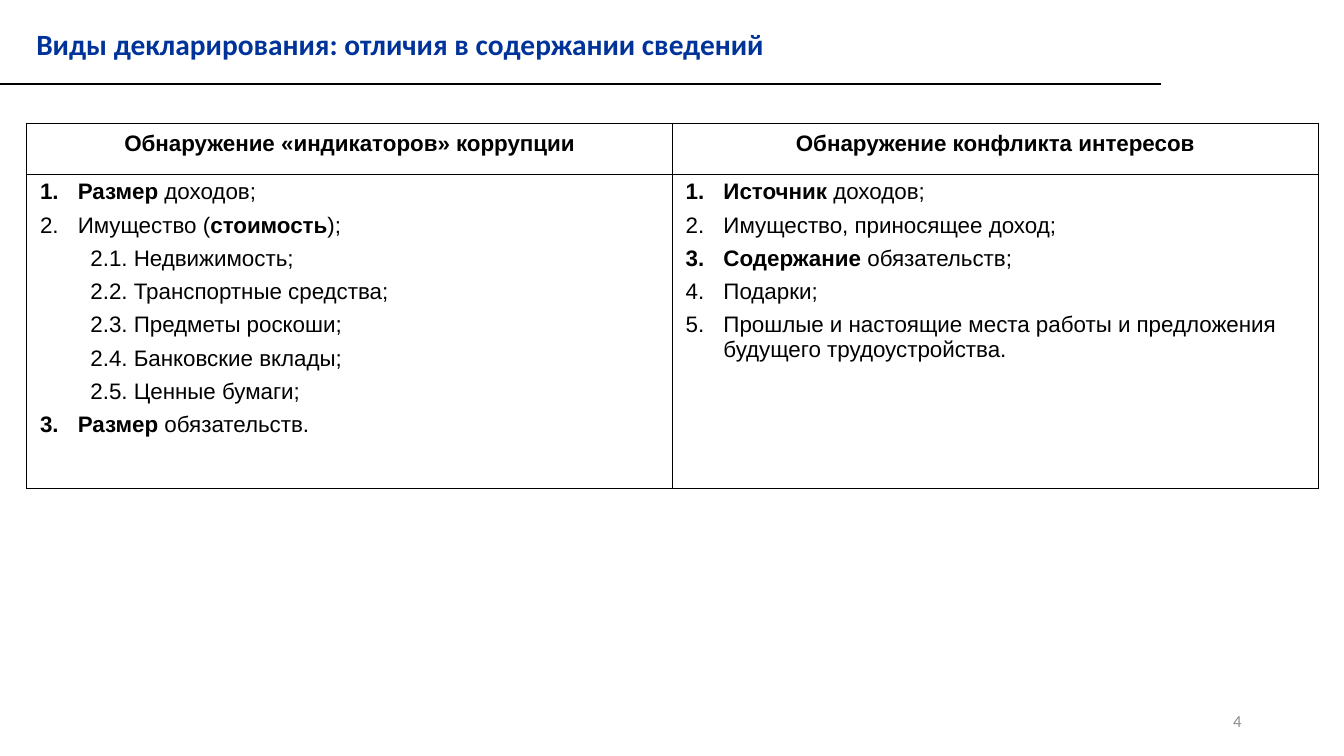
import pptx
import pptx.dml.color
import pptx.enum.shapes
import pptx.enum.text
import pptx.oxml
import pptx.oxml.ns
import pptx.util

Pt = pptx.util.Pt
PP_ALIGN = pptx.enum.text.PP_ALIGN
ANCHOR = pptx.enum.text.MSO_ANCHOR


def rgb(value):
    return pptx.dml.color.RGBColor.from_string(value)


def add_text(p, text, font="Arial", size=16, color="000000", bold=False):
    r = p.add_run()
    r.text = text
    r.font.name = font
    r.font.size = Pt(size)
    r.font.bold = bold
    r.font.color.rgb = rgb(color)


def add_xml(parent, xml):
    ns = pptx.oxml.ns.nsdecls("a")
    parent.append(pptx.oxml.parse_xml(xml.replace("/>", f" {ns}/>", 1)
                                      if xml.endswith("/>") and xml.count("<") == 1
                                      else xml.replace(">", f" {ns}>", 1)))


class Deck:
    """Holds the style and the current slide, and adds elements to it."""

    ink = "000000"
    accent = "003399"
    muted = "8C8C8C"
    heading_font = "Calibri"

    def __init__(self, prs):
        self.s = prs.slides.add_slide(prs.slide_layouts[5])

    def title(self, text, x, y, w, h):
        sp = self.s.shapes.title
        sp.left, sp.top, sp.width, sp.height = Pt(x), Pt(y), Pt(w), Pt(h)
        tf = sp.text_frame
        tf.word_wrap = False
        tf.auto_size = pptx.enum.text.MSO_AUTO_SIZE.NONE
        tf.vertical_anchor = ANCHOR.MIDDLE
        p = tf.paragraphs[0]
        p.alignment = PP_ALIGN.LEFT
        add_text(p, text, self.heading_font, 21, self.accent, True)

    def page_number(self, text, x, y, w, h):
        tf = self.s.shapes.add_textbox(Pt(x), Pt(y), Pt(w), Pt(h)).text_frame
        tf.word_wrap = True
        tf.vertical_anchor = ANCHOR.MIDDLE
        p = tf.paragraphs[0]
        p.alignment = PP_ALIGN.RIGHT
        add_text(p, text, self.heading_font, 12, self.muted)

    def rule(self, x1, x2, y):
        kind = pptx.enum.shapes.MSO_CONNECTOR.STRAIGHT
        sp = self.s.shapes.add_connector(kind, Pt(x1), Pt(y), Pt(x2), Pt(y))
        sp.line.color.rgb = rgb(self.ink)
        sp.line.width = Pt(1.5)
        add_xml(sp._element.spPr, "<a:effectLst/>")

    def table(self, columns, x, y, w, heights):
        table = self.s.shapes.add_table(2, len(columns), Pt(x), Pt(y), Pt(w),
                                        Pt(sum(heights))).table
        for row, height in zip(table.rows, heights):
            row.height = Pt(height)
        for i, (heading, items) in enumerate(columns):
            p = self.cell(table.cell(0, i)).paragraphs[0]
            p.alignment = PP_ALIGN.CENTER
            p.line_spacing = 1.14
            add_text(p, heading, bold=True)
            self.items(self.cell(table.cell(1, i)), items)

    def cell(self, cell):
        cell.margin_left = cell.margin_right = Pt(9.4)
        cell.margin_top = cell.margin_bottom = Pt(3.6)
        cell.vertical_anchor = ANCHOR.TOP
        tcPr = cell._tc.get_or_add_tcPr()
        for side in ("lnL", "lnR", "lnT", "lnB"):
            add_xml(tcPr, f'<a:{side} w="{Pt(1)}"><a:solidFill>'
                          f'<a:srgbClr val="{self.ink}"/></a:solidFill></a:{side}>')
        cell.fill.solid()
        cell.fill.fore_color.rgb = rgb("FFFFFF")
        return cell.text_frame

    def items(self, tf, items):
        for i, (level, runs) in enumerate(items):
            p = tf.add_paragraph() if i else tf.paragraphs[0]
            p.level = level
            p.space_after = Pt(6)
            pPr = p._p.get_or_add_pPr()
            pPr.set("marL", str(Pt(27 + 36 * level)))
            pPr.set("indent", str(Pt(-27)))
            add_xml(pPr, "<a:buNone/>" if level else '<a:buAutoNum type="arabicPeriod"/>')
            for text, bold in runs:
                add_text(p, text, bold=bold)


INDICATORS = [
    (0, [("Размер", True), (" доходов;", False)]),
    (0, [("Имущество (", False), ("стоимость", True), (");", False)]),
    (1, [("2.1. Недвижимость;", False)]),
    (1, [("2.2. Транспортные средства;", False)]),
    (1, [("2.3. Предметы роскоши;", False)]),
    (1, [("2.4. Банковские вклады;", False)]),
    (1, [("2.5. Ценные бумаги;", False)]),
    (0, [("Размер", True), (" обязательств.", False)]),
]
CONFLICTS = [
    (0, [("Источник", True), (" доходов;", False)]),
    (0, [("Имущество, приносящее доход;", False)]),
    (0, [("Содержание", True), (" обязательств;", False)]),
    (0, [("Подарки;", False)]),
    (0, [("Прошлые и настоящие места работы и предложения "
          "будущего трудоустройства.", False)]),
]


def main():
    prs = pptx.Presentation()
    prs.slide_width, prs.slide_height = Pt(960), Pt(540)
    deck = Deck(prs)
    deck.page_number("4", 678, 500.5, 216, 28.8)
    deck.table([("Обнаружение «индикаторов» коррупции", INDICATORS),
                ("Обнаружение конфликта интересов", CONFLICTS)],
               19.2, 88, 922.4, (36.7, 224))
    deck.title("Виды декларирования: отличия в содержании сведений",
               18.7, 15.1, 539.3, 32.4)
    deck.rule(0, 829.4, 60.2)
    prs.save("out.pptx")


if __name__ == "__main__":
    main()
